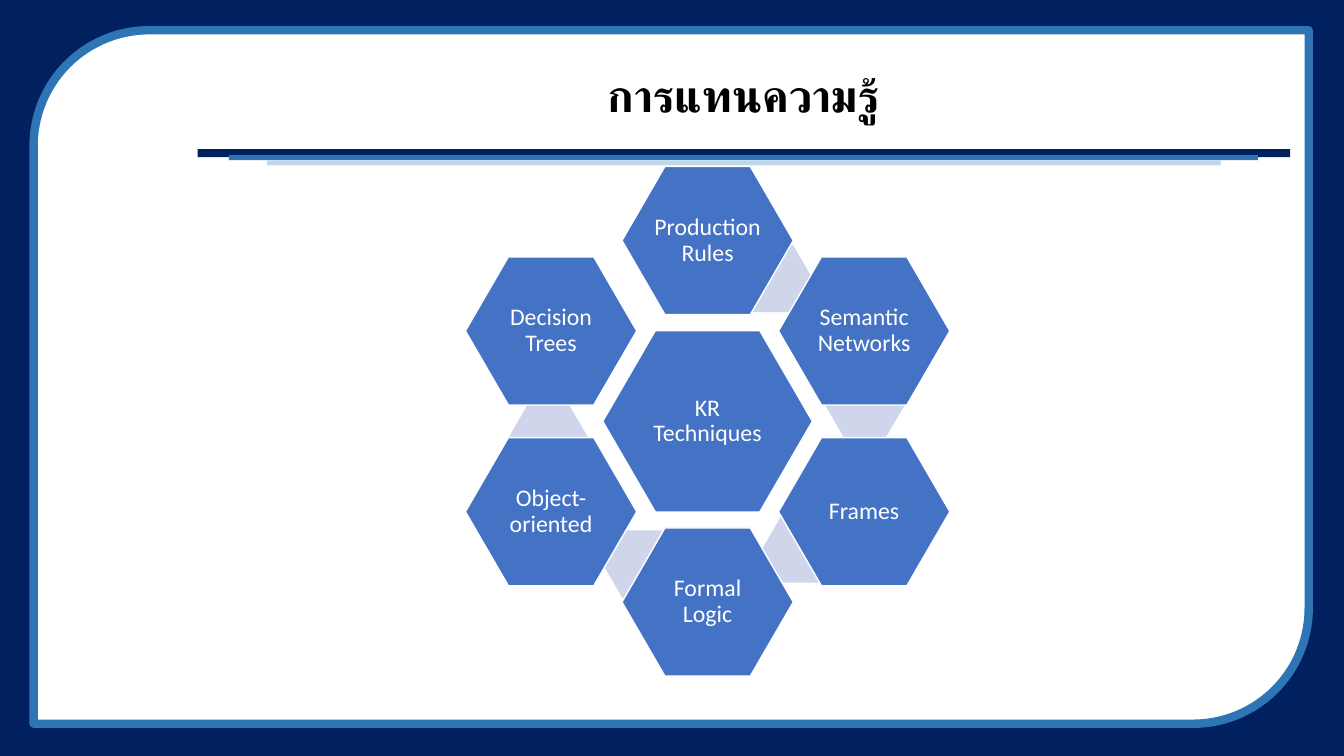
from math import cos, radians, sin

from lxml.etree import SubElement
from pptx import Presentation
from pptx.dml.color import RGBColor
from pptx.enum.shapes import MSO_SHAPE
from pptx.enum.text import MSO_ANCHOR, PP_ALIGN
from pptx.oxml.ns import qn
from pptx.util import Inches, Pt

NAVY = RGBColor(0x00, 0x20, 0x60)
BLUE = RGBColor(0x2E, 0x75, 0xB6)
PALE = RGBColor(0xBD, 0xD7, 0xEE)
HEX_BLUE = RGBColor(0x44, 0x72, 0xC4)
LINK_GREY = RGBColor(0xCF, 0xD5, 0xEA)
WHITE = RGBColor(0xFF, 0xFF, 0xFF)
BLACK = RGBColor(0x00, 0x00, 0x00)

COLS, ROWS = 40, 22.5
CENTER = (21.06, 12.54)
RADIUS = 5.38
TECHNIQUES = ["Production\nRules", "Semantic\nNetworks", "Frames",
              "Formal\nLogic", "Object-\noriented", "Decision\nTrees"]
LINK_OFFSETS = [(1.95, -4.25), (4.68, -0.46), (2.79, 3.8),
                (-1.95, 4.25), (-4.74, 0.46)]
RULES = [(5.88, 4.44, 32.52, 0.24, NAVY),
         (6.81, 4.62, 30.63, 0.15, BLUE),
         (7.95, 4.77, 28.38, 0.15, PALE)]


def write(tf, text, font="Calibri", size=17, color=WHITE, bold=False):
    tf.word_wrap = True
    tf.vertical_anchor = MSO_ANCHOR.MIDDLE
    p = tf.paragraphs[0]
    p.text = text.replace("\n", "\v")
    p.alignment = PP_ALIGN.CENTER
    p.line_spacing = 0.9
    for r in p.runs:
        r.font.name = font
        r.font.size = Pt(size)
        r.font.bold = bold
        r.font.color.rgb = color
        SubElement(r.font._element, qn("a:cs"), typeface=font)


class Deck:
    def __init__(self):
        self.prs = Presentation()
        self.prs.slide_width = Inches(13.33)
        self.prs.slide_height = Inches(7.5)
        self.s = self.prs.slides.add_slide(self.prs.slide_layouts[5])

    def box(self, x, y, w, h):
        col = self.prs.slide_width / COLS
        row = self.prs.slide_height / ROWS
        return int(x * col), int(y * row), int(w * col), int(h * row)

    def shape(self, kind, x, y, w, h, fill, line=None, width=1):
        sp = self.s.shapes.add_shape(kind, *self.box(x, y, w, h))
        sp.shadow.inherit = False
        sp.fill.solid()
        sp.fill.fore_color.rgb = fill
        if line is None:
            sp.line.fill.background()
        else:
            sp.line.color.rgb = line
            sp.line.width = Pt(width)
        return sp

    def title(self, text, x, y, w, h):
        sp = self.s.shapes.title
        sp.left, sp.top, sp.width, sp.height = self.box(x, y, w, h)
        write(sp.text_frame, text, font="Arial", size=32, color=BLACK, bold=True)
        sp.element.getparent().append(sp.element)

    def hexagon(self, cx, cy, w, h, fill, line=None, text=None):
        sp = self.shape(MSO_SHAPE.HEXAGON, cx - w / 2, cy - h / 2, w, h, fill, line)
        sp.adjustments[0] = 0.29
        if text:
            tf = sp.text_frame
            tf.margin_left = tf.margin_right = Inches(0.02)
            tf.margin_top = tf.margin_bottom = Inches(0.02)
            write(tf, text)

    def ring(self):
        cx, cy = CENTER
        self.hexagon(cx, cy, 6.24, 5.4, HEX_BLUE, WHITE, "KR\nTechniques")
        for i, name in enumerate(TECHNIQUES):
            if i < len(LINK_OFFSETS):
                dx, dy = LINK_OFFSETS[i]
                self.hexagon(cx + dx, cy + dy, 2.34, 2.01, LINK_GREY)
            angle = radians(60 * i)
            self.hexagon(cx + RADIUS * sin(angle), cy - RADIUS * cos(angle),
                         5.1, 4.41, HEX_BLUE, WHITE, name)


def main():
    deck = Deck()
    deck.shape(MSO_SHAPE.RECTANGLE, 0, 0, COLS, ROWS, NAVY)
    deck.shape(MSO_SHAPE.ROUND_2_DIAG_RECTANGLE, 1, 0.9, 37.95, 20.64, WHITE, BLUE, 6)
    for x, y, w, h, color in RULES:
        deck.shape(MSO_SHAPE.RECTANGLE, x, y, w, h, color)
    deck.title("การแทนความรู้", 5.88, 1.47, 32.52, 2.91)
    deck.ring()
    deck.prs.save("out.pptx")


if __name__ == "__main__":
    main()
